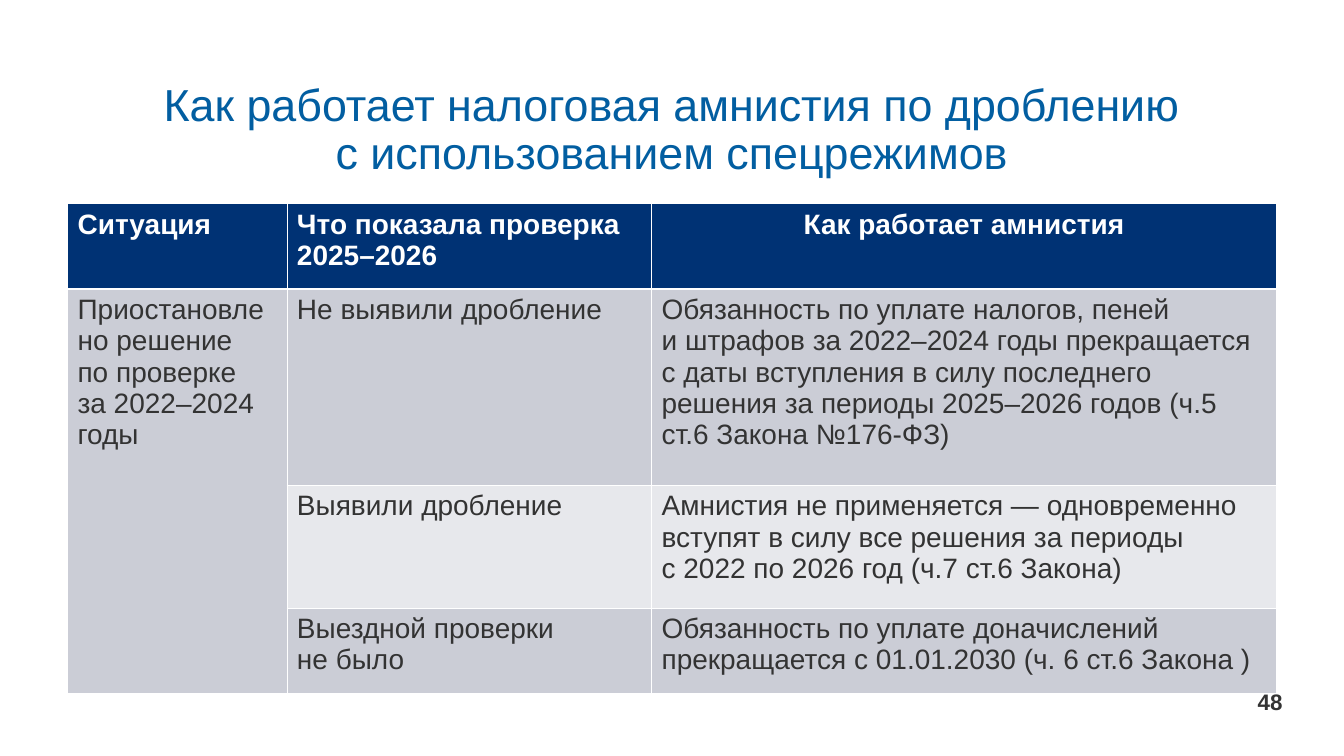
from lxml import etree
from pptx import Presentation
from pptx import util as u
from pptx.dml.color import RGBColor
from pptx.enum import text
from pptx.oxml import ns

WHITE = RGBColor(0xFF, 0xFF, 0xFF)
NAVY = RGBColor(0x00, 0x32, 0x74)
BLUE = RGBColor(0x02, 0x5E, 0xA1)
DARK = RGBColor(0x33, 0x33, 0x33)
GRAY = RGBColor(0xCB, 0xCD, 0xD6)
LIGHT = RGBColor(0xE7, 0xE8, 0xEC)

LEFT, CENTER, RIGHT = text.PP_ALIGN.LEFT, text.PP_ALIGN.CENTER, text.PP_ALIGN.RIGHT
TOP, BOTTOM = text.MSO_ANCHOR.TOP, text.MSO_ANCHOR.BOTTOM
NBSP = chr(160)

# A tilde ties two words with a no-break space
HEADER = ["Ситуация", "Что показала проверка 2025–2026", "Как работает амнистия"]
SITUATION = "Приостановлено решение по~проверке за~2022–2024 годы"
OUTCOMES = [
    ("Не~выявили дробление",
     "Обязанность по~уплате налогов, пеней и~штрафов за~2022–2024 годы прекращается "
     "с~даты вступления в~силу последнего решения за~периоды 2025–2026 годов "
     "(ч.5 ст.6 Закона №176-ФЗ)"),
    ("Выявили дробление",
     "Амнистия не~применяется~— одновременно вступят в~силу все решения за~периоды "
     "с~2022 по~2026 год~(ч.7 ст.6 Закона)"),
    ("Выездной проверки не~было",
     "Обязанность по~уплате доначислений прекращается с~01.01.2030 "
     "(ч. 6 ст.6 Закона )"),
]


def write(tf, content, size=20, color=DARK, bold=False, align=LEFT, spacing=1.0):
    p = tf.paragraphs[0]
    p.alignment, p.line_spacing = align, spacing
    r = p.add_run()
    r.text = content.replace("~", NBSP)
    r.font.name, r.font.size, r.font.bold = "Arial", u.Pt(size), bold
    r.font.color.rgb = color


class Deck:
    def __init__(self, width, height):
        self.prs = Presentation()
        self.prs.slide_width, self.prs.slide_height = u.Pt(width), u.Pt(height)
        self.s = self.prs.slides.add_slide(self.prs.slide_layouts[6])

    def label(self, box, content, margins=(7.2, 3.6), anchor=TOP, **style):
        tf = self.s.shapes.add_textbox(*map(u.Pt, box)).text_frame
        tf.word_wrap, tf.vertical_anchor = True, anchor
        tf.margin_left = tf.margin_right = u.Pt(margins[0])
        tf.margin_top = tf.margin_bottom = u.Pt(margins[1])
        write(tf, content, **style)

    def table(self, left, top, widths, heights):
        box = map(u.Pt, (left, top, sum(widths), sum(heights)))
        table = self.s.shapes.add_table(len(heights), len(widths), *box).table
        for column, width in zip(table.columns, widths):
            column.width = u.Pt(width)
        for row, height in zip(table.rows, heights):
            row.height = u.Pt(height)
        return table

    def cell(self, cell, fill, top=0.45, bottom=0.45, content=None, **style):
        # Borders come before the fill in the cell properties
        tc_pr = cell._tc.get_or_add_tcPr()
        for side, width in (("L", 0.45), ("R", 0.45), ("T", top), ("B", bottom)):
            ln = etree.SubElement(tc_pr, ns.qn(f"a:ln{side}"), w=str(u.Pt(width)))
            solid = etree.SubElement(ln, ns.qn("a:solidFill"))
            etree.SubElement(solid, ns.qn("a:srgbClr"), val=str(WHITE))
        cell.fill.solid()
        cell.fill.fore_color.rgb = fill
        if content:
            write(cell.text_frame, content, **style)


def main():
    deck = Deck(960.48, 540)

    # Title
    deck.label((48.24, 55.44, 864, 90),
               "Как работает налоговая амнистия по~дроблению с~использованием спецрежимов",
               size=32, color=BLUE, align=CENTER, spacing=0.9)

    # Table header
    table = deck.table(48.24, 145.44, (156.8, 260.6, 446.6), (61.2, 140.2, 87.4, 61.2))
    for col, heading in enumerate(HEADER):
        deck.cell(table.cell(0, col), NAVY, bottom=1.47, content=heading, color=WHITE,
                  bold=True, align=CENTER if col == 2 else LEFT)

    # Table body, one situation across all outcomes
    table.cell(1, 0).merge(table.cell(3, 0))
    for row, outcome in enumerate(OUTCOMES, 1):
        top = 1.47 if row == 1 else 0.45
        deck.cell(table.cell(row, 0), GRAY, top=top, content=SITUATION if row == 1 else None)
        for col, content in enumerate(outcome, 1):
            deck.cell(table.cell(row, col), LIGHT if row == 2 else GRAY, top=top,
                      content=content)

    # Page number, in front of the table and just below its edge
    deck.label((880.5, 494.2, 36, 16.6), "48", margins=(0, 0), anchor=BOTTOM,
               size=16, bold=True, align=RIGHT, spacing=0.9)

    deck.prs.save("out.pptx")


if __name__ == "__main__":
    main()
